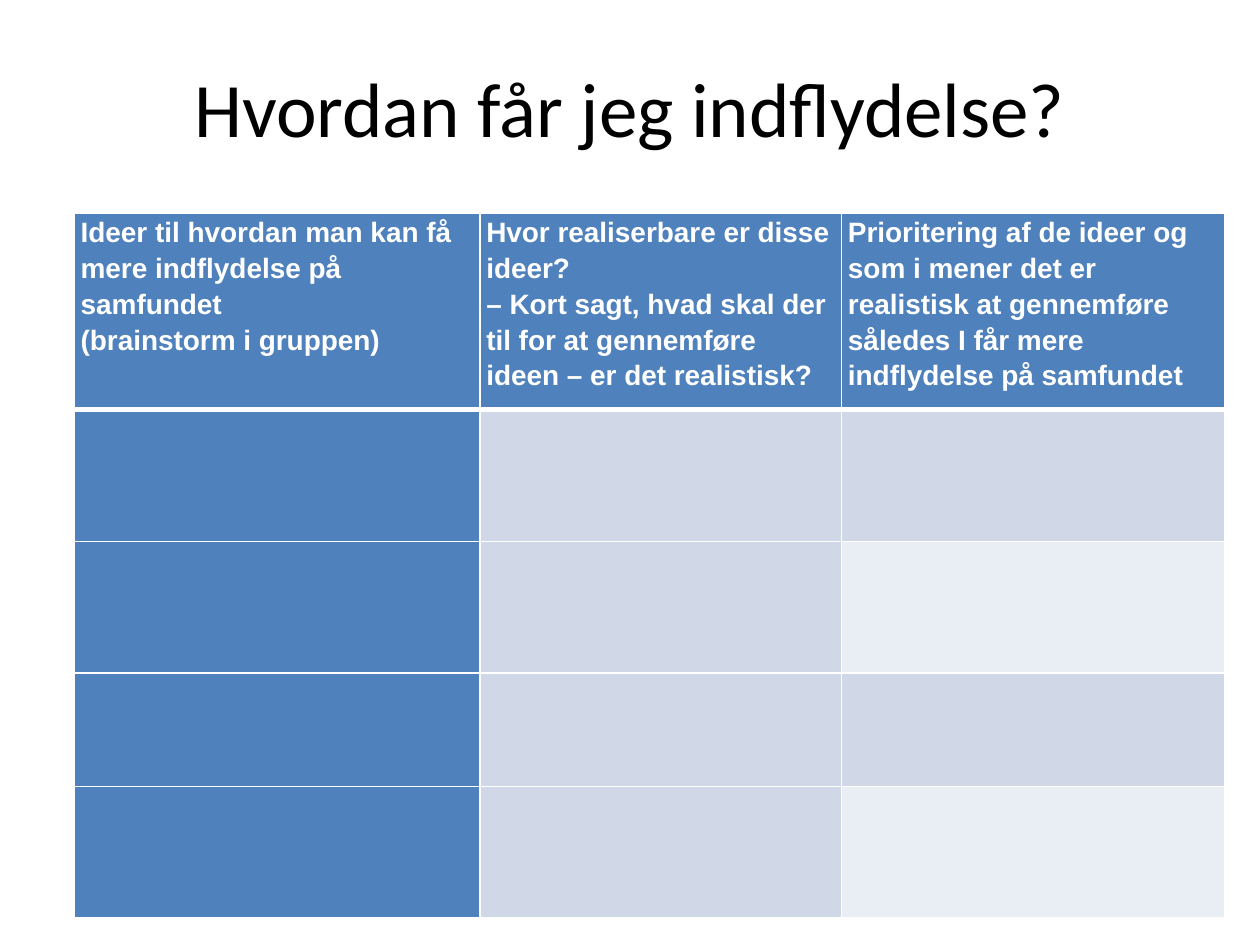
from dataclasses import dataclass
from typing import Any

from lxml.etree import SubElement
from pptx import Presentation
from pptx.dml.color import RGBColor
from pptx.enum.text import MSO_ANCHOR, PP_ALIGN
from pptx.oxml.ns import qn
from pptx.util import Pt


@dataclass(frozen=True)
class Theme:
    accent: str = "4F81BD"
    band_dark: str = "D0D8E8"
    band_light: str = "E9EDF4"
    light: str = "FFFFFF"
    dark: str = "000000"
    title_font: str = "Calibri"
    table_font: str = "Arial"
    title_size: float = 44
    header_size: float = 16
    rule: float = 1
    header_rule: float = 3


@dataclass(frozen=True)
class Column:
    width: float
    heading: tuple[str, ...]
    bands: tuple[str, str]


THEME = Theme()
COLUMNS = (
    Column(
        231.8,
        ("Ideer til hvordan man kan få mere indflydelse på samfundet", "(brainstorm i gruppen)"),
        (THEME.accent, THEME.accent),
    ),
    Column(
        206.7,
        (
            "Hvor realiserbare er disse ideer?",
            "– Kort sagt, hvad skal der til for at gennemføre ideen – er det realistisk?",
        ),
        (THEME.band_dark, THEME.band_dark),
    ),
    Column(
        218.9,
        (
            "Prioritering af de ideer og som i mener det er realistisk at gennemføre "
            "således I får mere indflydelse på samfundet",
        ),
        (THEME.band_dark, THEME.band_light),
    ),
)
ROW_HEIGHTS = (112.5, 75.2, 75.2, 64.8, 75.2)


def set_format(target: Any, values: dict[str, Any]) -> None:
    for name, value in values.items():
        setattr(target, name, value)


def set_font(font: Any, name: str, size: float, color: str, bold: bool) -> None:
    set_format(font, {"name": name, "size": Pt(size), "bold": bold})
    font.color.rgb = RGBColor.from_string(color)


def add_border(cell: Any, side: str, width: float) -> None:
    properties = cell._tc.get_or_add_tcPr()
    line = SubElement(properties, qn(f"a:ln{side}"), w=str(Pt(width)))
    fill = SubElement(line, qn("a:solidFill"))
    SubElement(fill, qn("a:srgbClr"), val=THEME.light)


def style_cell(cell: Any, row: int, color: str) -> None:
    top = THEME.header_rule if row == 1 else THEME.rule
    bottom = THEME.header_rule if row == 0 else THEME.rule
    for side, width in {"L": THEME.rule, "R": THEME.rule, "T": top, "B": bottom}.items():
        add_border(cell, side, width)
    cell.fill.solid()
    cell.fill.fore_color.rgb = RGBColor.from_string(color)


def write_heading(cell: Any, lines: tuple[str, ...]) -> None:
    set_format(cell, {
        "margin_left": Pt(3.6),
        "margin_right": Pt(3.6),
        "margin_top": Pt(0),
        "margin_bottom": Pt(0),
        "vertical_anchor": MSO_ANCHOR.TOP,
    })
    cell.text_frame.text = "\n".join(lines)
    for para in cell.text_frame.paragraphs:
        para.line_spacing = 1.15
        for span in para.runs:
            set_font(span.font, THEME.table_font, THEME.header_size, THEME.light, True)


def add_title(page: Any, text: str) -> None:
    box = page.shapes.title
    set_format(box, {"left": Pt(36), "top": Pt(21.6), "width": Pt(648), "height": Pt(78.5)})
    box.text_frame.text = text
    box.text_frame.vertical_anchor = MSO_ANCHOR.MIDDLE
    para = box.text_frame.paragraphs[0]
    para.alignment = PP_ALIGN.CENTER
    set_font(para.runs[0].font, THEME.title_font, THEME.title_size, THEME.dark, False)


def add_idea_table(page: Any) -> None:
    width = sum(column.width for column in COLUMNS)
    table = page.shapes.add_table(
        len(ROW_HEIGHTS), len(COLUMNS), Pt(42.5), Pt(121.7), Pt(width), Pt(sum(ROW_HEIGHTS))
    ).table
    for row, height in enumerate(ROW_HEIGHTS):
        table.rows[row].height = Pt(height)
    for index, column in enumerate(COLUMNS):
        table.columns[index].width = Pt(column.width)
        write_heading(table.cell(0, index), column.heading)
        for row in range(len(ROW_HEIGHTS)):
            color = column.bands[(row - 1) % 2] if row else THEME.accent
            style_cell(table.cell(row, index), row, color)


def main() -> None:
    deck = Presentation()
    set_format(deck, {"slide_width": Pt(720), "slide_height": Pt(540)})
    page = deck.slides.add_slide(deck.slide_layouts.get_by_name("Title Only"))
    add_title(page, "Hvordan får jeg indflydelse?")
    add_idea_table(page)
    deck.save("out.pptx")


if __name__ == "__main__":
    main()
